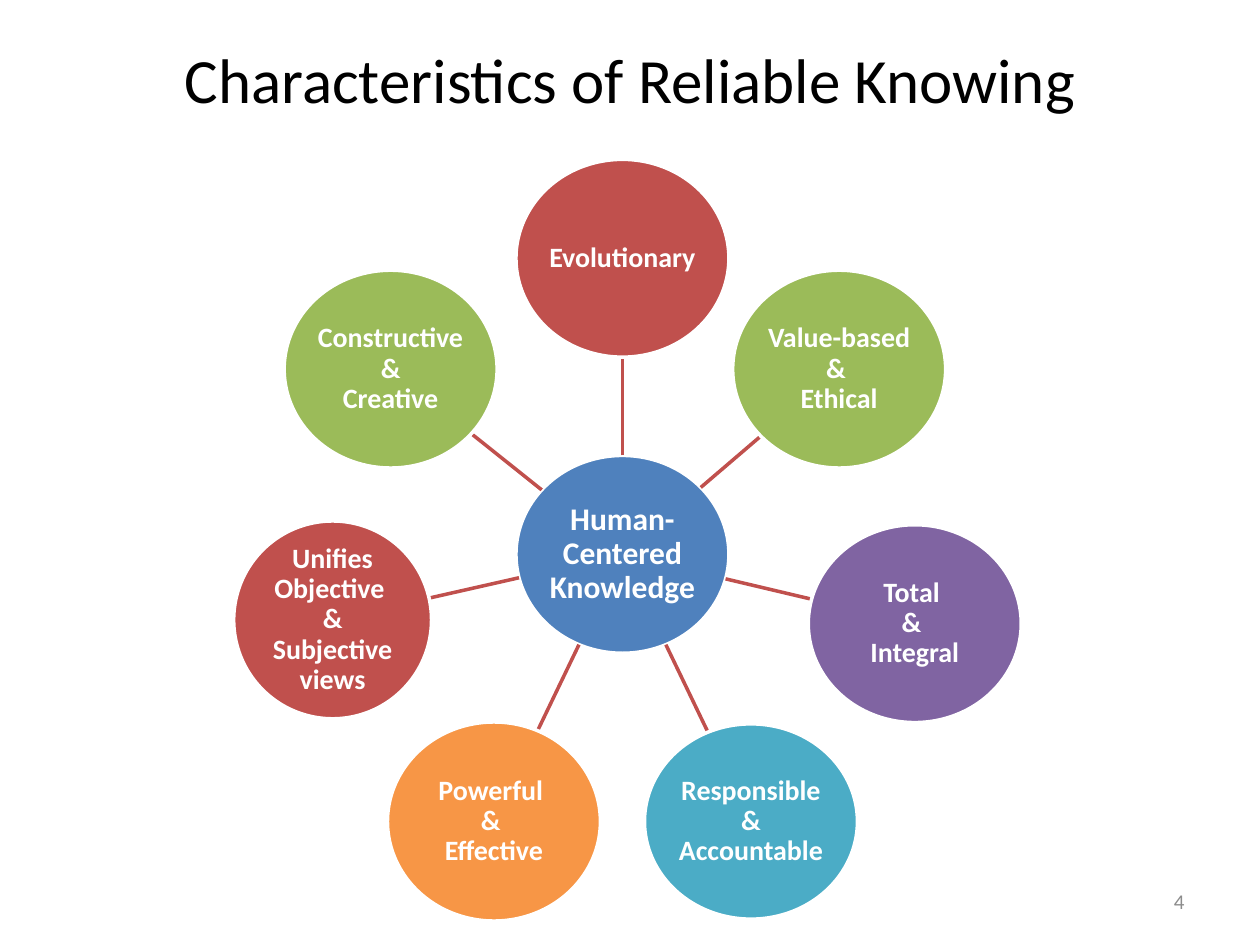
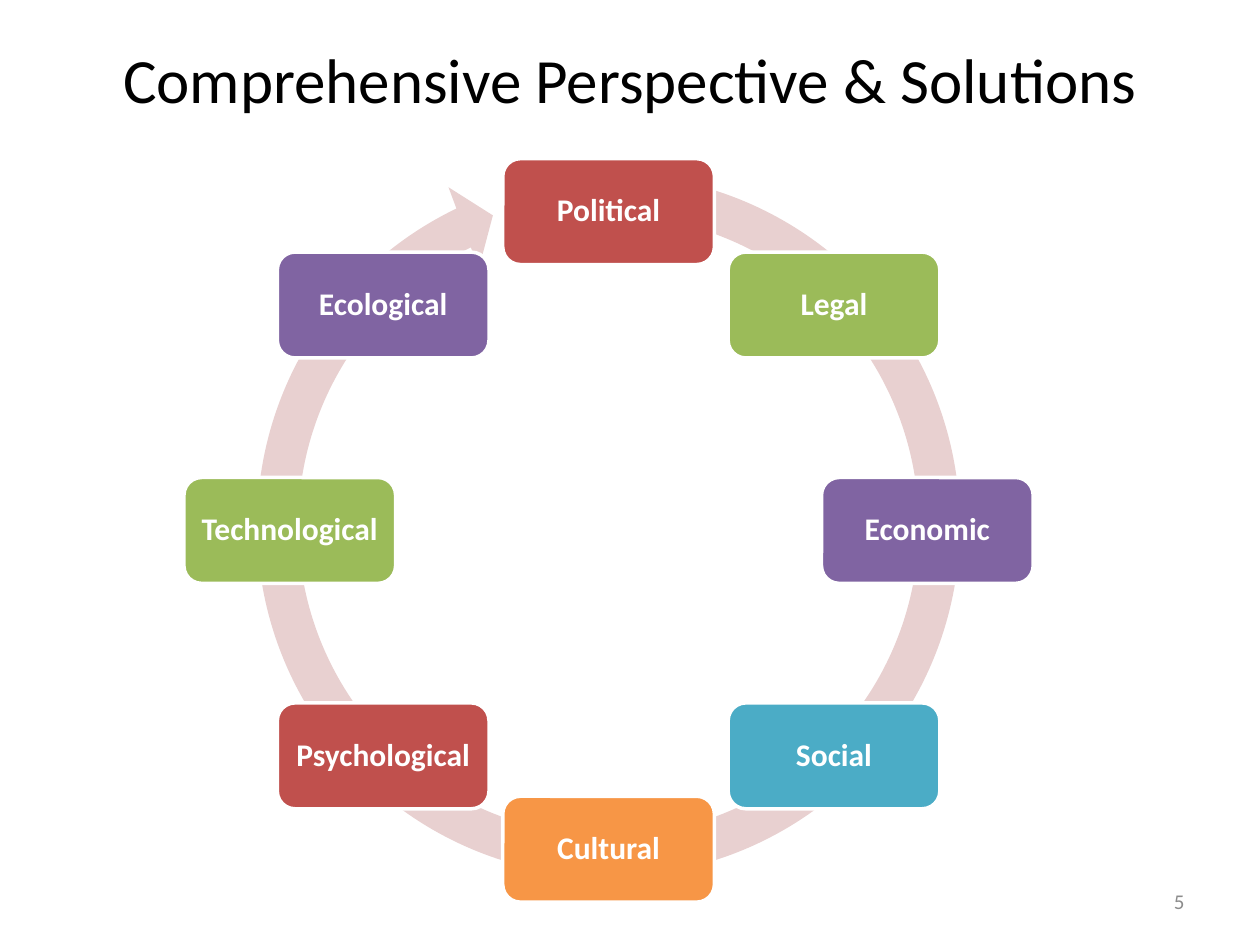
import math
from lxml import etree
from pptx import Presentation
from pptx.dml.color import RGBColor
from pptx.enum.shapes import MSO_CONNECTOR, MSO_SHAPE
from pptx.enum.text import MSO_ANCHOR, PP_ALIGN
from pptx.oxml.ns import qn
from pptx.util import Inches, Pt

STRAIGHT = MSO_CONNECTOR.STRAIGHT
ELLIPSE = MSO_SHAPE.OVAL
ROUNDED = MSO_SHAPE.ROUNDED_RECTANGLE
RING_ARROW = MSO_SHAPE.CIRCULAR_ARROW
MIDDLE = MSO_ANCHOR.MIDDLE
CENTER, RIGHT = PP_ALIGN.CENTER, PP_ALIGN.RIGHT

FONT = "Calibri"
COLORS = {
    "black": "000000", "white": "FFFFFF", "grey": "8C8C8C",
    "blue": "4F81BD", "red": "C0504D", "green": "9BBB59",
    "purple": "8064A2", "teal": "4BACC6", "orange": "F79646",
    "ring": "E8D0D0",
}

KNOWING_TITLE = "Characteristics of Reliable Knowing"
HUB = ("Human- Centered Knowledge", "blue", (4.94, 4.4), (1.69, 1.57))
TRAITS = [
    ("Evolutionary", "red", (4.94, 2.05), (1.69, 1.57)),
    ("Value-based & \vEthical", "green", (6.66, 2.93), (1.69, 1.57)),
    ("Total \v& \vIntegral", "purple", (7.26, 4.95), (1.69, 1.57)),
    ("Responsible & Accountable", "teal", (5.96, 6.52), (1.69, 1.55)),
    ("Powerful \v& \vEffective", "orange", (3.92, 6.52), (1.69, 1.58)),
    ("Unifies Objective \v& Subjective views", "red", (2.64, 4.92), (1.57, 1.57)),
    ("Constructive\v & \vCreative", "green", (3.1, 2.93), (1.69, 1.57)),
]

PERSPECTIVE_TITLE = "Comprehensive Perspective & Solutions"
FIELDS = [
    ("Political", "red"), ("Legal", "green"), ("Economic", "purple"),
    ("Social", "teal"), ("Cultural", "orange"), ("Psychological", "red"),
    ("Technological", "green"), ("Ecological", "purple"),
]
CYCLE_CENTER = (4.83, 4.21)
CYCLE_RADIUS = 2.53
FIELD_SIZE = (1.68, 0.84)
ARROW_CENTER = (4.83, 4.17)
ARROW_SIZE = 5.94
ARROW_PERCENTS = (5.5, 330.7, 14642, 16878.3, 5.8)


def rgb(name):
    return RGBColor.from_string(COLORS[name])


def write(shape, text, size, color, align=CENTER, bold=False, inset=None, spacing=None):
    tf = shape.text_frame
    tf.word_wrap = True
    tf.vertical_anchor = MIDDLE
    if inset is not None:
        tf.margin_left = tf.margin_right = Inches(inset)
        tf.margin_top = tf.margin_bottom = Inches(inset)
    p = tf.paragraphs[0]
    p.text = text
    p.alignment = align
    if spacing:
        p.line_spacing = spacing
    for r in p.runs:
        r.font.name = FONT
        r.font.size = Pt(size)
        r.font.bold = bold
        r.font.color.rgb = rgb(color)


def add_text(s, box, text, size, color, align):
    write(s.shapes.add_textbox(*map(Inches, box)), text, size, color, align)


def new_slide(prs, title, number):
    s = prs.slides.add_slide(prs.slide_layouts[6])
    add_text(s, (0.5, 0, 9, 1.25), title, 36, "black", CENTER)
    add_text(s, (7.17, 6.95, 2.33, 0.4), str(number), 12, "grey", RIGHT)
    return s


def add_centered(s, kind, center, size, color):
    (x, y), (w, h) = center, size
    sp = s.shapes.add_shape(kind, Inches(x - w / 2), Inches(y - h / 2), Inches(w), Inches(h))
    sp.shadow.inherit = False
    sp.fill.solid()
    sp.fill.fore_color.rgb = rgb(color)
    return sp


def add_node(s, kind, center, size, color, text, text_size, inset):
    sp = add_centered(s, kind, center, size, color)
    sp.line.color.rgb = rgb("white")
    sp.line.width = Pt(2)
    write(sp, text, text_size, "white", bold=True, inset=inset, spacing=0.9)


def edge_point(center, size, target):
    dx, dy = target[0] - center[0], target[1] - center[1]
    scale = 1 / math.hypot(2 * dx / size[0], 2 * dy / size[1])
    return Inches(center[0] + dx * scale), Inches(center[1] + dy * scale)


def add_spoke(s, center, size, hub_center, hub_size):
    start = edge_point(hub_center, hub_size, center)
    end = edge_point(center, size, hub_center)
    line = s.shapes.add_connector(STRAIGHT, *start, *end)
    line.line.color.rgb = rgb("red")
    line.line.width = Pt(2)
    etree.SubElement(line._element.spPr, qn("a:effectLst"))


def build_knowing(prs):
    s = new_slide(prs, KNOWING_TITLE, 4)
    hub_text, hub_color, hub_center, hub_size = HUB
    add_node(s, ELLIPSE, hub_center, hub_size, hub_color, hub_text, 18, 0.01)
    for text, color, center, size in TRAITS:
        add_spoke(s, center, size, hub_center, hub_size)
        add_node(s, ELLIPSE, center, size, color, text, 16, 0.01)


def build_perspective(prs):
    s = new_slide(prs, PERSPECTIVE_TITLE, 5)
    arrow = add_centered(s, RING_ARROW, ARROW_CENTER, (ARROW_SIZE, ARROW_SIZE), "ring")
    arrow.line.fill.background()
    for i, percent in enumerate(ARROW_PERCENTS):
        arrow.adjustments[i] = percent / 100
    for i, (text, color) in enumerate(FIELDS):
        angle = 2 * math.pi * i / len(FIELDS)
        center = (CYCLE_CENTER[0] + CYCLE_RADIUS * math.sin(angle),
                  CYCLE_CENTER[1] - CYCLE_RADIUS * math.cos(angle))
        add_node(s, ROUNDED, center, FIELD_SIZE, color, text, 18, 0.07)


def main():
    prs = Presentation()
    prs.slide_width, prs.slide_height = Inches(10), Inches(7.5)
    build_knowing(prs)
    build_perspective(prs)
    prs.save("out.pptx")


if __name__ == "__main__":
    main()
